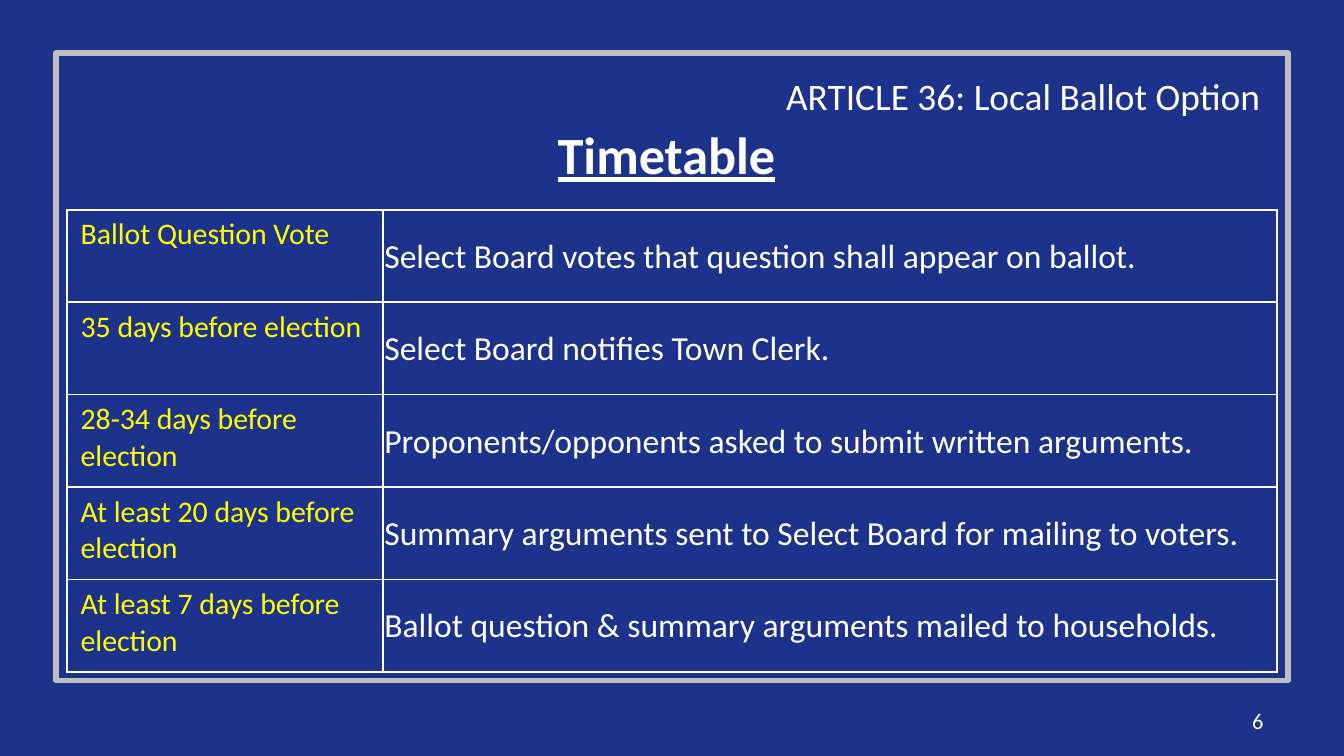
from lxml import etree
from pptx import Presentation
from pptx.dml.color import RGBColor
from pptx.enum.shapes import MSO_SHAPE
from pptx.enum.text import MSO_ANCHOR, PP_ALIGN
from pptx.oxml.ns import qn
from pptx.util import Inches, Pt

RECT = MSO_SHAPE.RECTANGLE
TOP, MIDDLE = MSO_ANCHOR.TOP, MSO_ANCHOR.MIDDLE
LEFT, CENTER, RIGHT = PP_ALIGN.LEFT, PP_ALIGN.CENTER, PP_ALIGN.RIGHT

W = 10
H = W * 9 / 16
FONT = "Calibri"
NAVY, GREY, WHITE, YELLOW = "1D328B", "BFBFBF", "FFFFFF", "FFFF00"
DATE_SHARE = 2.35 / 9  # width of the date column within the table

TIMETABLE = [
    ("Ballot Question Vote",
     "Select Board votes that question shall appear on ballot."),
    ("35 days before election",
     "Select Board notifies Town Clerk."),
    ("28-34 days before election",
     "Proponents/opponents asked to submit written arguments."),
    ("At least 20 days before election",
     "Summary arguments sent to Select Board for mailing to voters."),
    ("At least 7 days before election",
     "Ballot question & summary arguments mailed to households."),
]


def rgb(value):
    return RGBColor.from_string(value)


def share(x, y, w, h):
    """Box in inches from percentages of the slide's size."""
    return x * W / 100, y * H / 100, w * W / 100, h * H / 100


def inches(box):
    return [Inches(v) for v in box]


def write(tf, text, size, color=WHITE, align=LEFT, bold=False, underline=False):
    tf.text = text
    p = tf.paragraphs[0]
    p.alignment = align
    font = p.runs[0].font
    font.name, font.size, font.color.rgb = FONT, Pt(size), rgb(color)
    font.bold, font.underline = bold, underline


def add_label(s, box, text, size, anchor=MIDDLE, **style):
    tf = s.shapes.add_textbox(*inches(box)).text_frame
    tf.word_wrap = True
    tf.vertical_anchor = anchor
    write(tf, text, size, **style)


def add_frame(s, box):
    sp = s.shapes.add_shape(RECT, *inches(box))
    sp.shadow.inherit = False
    sp.fill.background()
    sp.line.color.rgb = rgb(GREY)
    sp.line.width = Pt(3)


def set_borders(cell, color, width):
    tcPr = cell._tc.get_or_add_tcPr()
    # Borders come before the fill in the cell properties
    for i, side in enumerate(("a:lnL", "a:lnR", "a:lnT", "a:lnB")):
        ln = etree.Element(qn(side), w=str(Pt(width)))
        fill = etree.SubElement(ln, qn("a:solidFill"))
        etree.SubElement(fill, qn("a:srgbClr"), val=color)
        tcPr.insert(i, ln)


def add_timetable(s, box):
    w, h = box[2:]
    table = s.shapes.add_table(len(TIMETABLE), 2, *inches(box)).table
    table.first_row = table.horz_banding = False
    table.columns[0].width = Inches(w * DATE_SHARE)
    table.columns[1].width = Inches(w * (1 - DATE_SHARE))
    for row, (date, step) in zip(table.rows, TIMETABLE):
        row.height = Inches(h / len(TIMETABLE))
        date_cell, step_cell = row.cells
        write(date_cell.text_frame, date, 16, YELLOW)
        write(step_cell.text_frame, step, 18)
        step_cell.vertical_anchor = MIDDLE
        step_cell.margin_left = step_cell.margin_right = Inches(0.01)
        step_cell.margin_top, step_cell.margin_bottom = Inches(0.01), 0
        for cell in row.cells:
            cell.fill.background()
            set_borders(cell, WHITE, 1)


def add_timetable_slide(prs):
    s = prs.slides.add_slide(prs.slide_layouts[6])
    s.background.fill.solid()
    s.background.fill.fore_color.rgb = rgb(NAVY)

    # Frame
    add_frame(s, share(4.17, 7.04, 91.67, 82.96))
    # Title, page number and article heading
    add_label(s, share(3.33, 14.4, 92.5, 11.9), "Timetable", 28,
              align=CENTER, bold=True, underline=True)
    add_label(s, share(71.67, 92.7, 23.33, 5.33), "6", 12, align=RIGHT)
    add_label(s, share(57.5, 8.75, 37.5, 7.8),
              "ARTICLE 36: Local Ballot Option", 20, anchor=TOP)
    # Timetable
    add_timetable(s, share(5, 27.75, 90, 61.15))


def main():
    prs = Presentation()
    prs.slide_width, prs.slide_height = Inches(W), Inches(H)
    add_timetable_slide(prs)
    prs.save("out.pptx")


if __name__ == "__main__":
    main()
